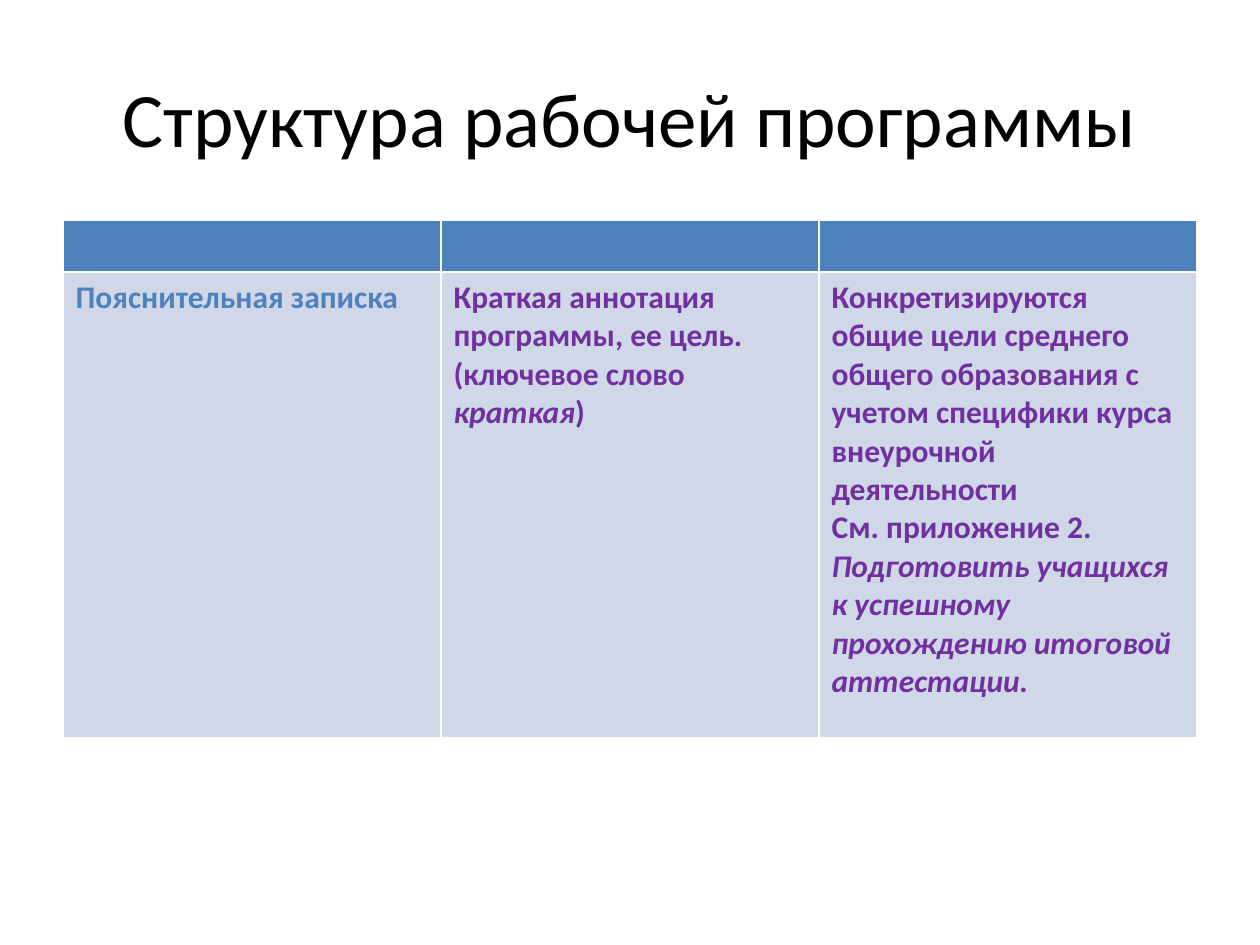
from pptx import Presentation
from pptx import util as u
from pptx.dml.color import RGBColor
from pptx.enum import text

BLACK = RGBColor(0x00, 0x00, 0x00)
BLUE = RGBColor(0x4F, 0x81, 0xBD)
PALE = RGBColor(0xD0, 0xD8, 0xE8)
PURPLE = RGBColor(0x70, 0x30, 0xA0)


def px(length):
    return u.Emu(round(length * 914400 / 126))


def add_span(para, words, size=18, color=PURPLE, bold=True, italic=False):
    span = para.add_run()
    span.text = words
    font = span.font
    font.name = "Calibri"
    font.size = u.Pt(size)
    font.color.rgb = color
    font.bold = bold
    font.italic = italic


deck = Presentation()
deck.slide_width, deck.slide_height = px(1260), px(945)
page = deck.slides.add_slide(deck.slide_layouts[6])

title = page.shapes.add_textbox(px(63), px(38), px(1134), px(158)).text_frame
title.word_wrap = True
title.vertical_anchor = text.MSO_ANCHOR.MIDDLE
title.paragraphs[0].alignment = text.PP_ALIGN.CENTER
add_span(title.paragraphs[0], "Структура рабочей программы", size=44, color=BLACK, bold=False)

table = page.shapes.add_table(2, 3, px(63), px(220), px(1134), px(518)).table
table.rows[0].height, table.rows[1].height = px(52), px(466)

contents = [
    [[("Пояснительная записка", {"color": BLUE})]],
    [
        [("Краткая аннотация программы, ее цель.", {})],
        [("(ключевое слово ", {}), ("краткая", {"italic": True}), (")", {})],
    ],
    [
        [("Конкретизируются общие цели среднего общего образования "
          "с учетом специфики курса внеурочной деятельности", {})],
        [("См. приложение 2.", {})],
        [("Подготовить учащихся к успешному прохождению итоговой аттестации.", {"italic": True})],
    ],
]

for column, paragraphs in enumerate(contents):
    table.columns[column].width = px(378)
    for row, color in enumerate((BLUE, PALE)):
        fill = table.cell(row, column).fill
        fill.solid()
        fill.fore_color.rgb = color
    frame = table.cell(1, column).text_frame
    for index, spans in enumerate(paragraphs):
        para = frame.add_paragraph() if index else frame.paragraphs[0]
        for words, style in spans:
            add_span(para, words, **style)

deck.save("out.pptx")
